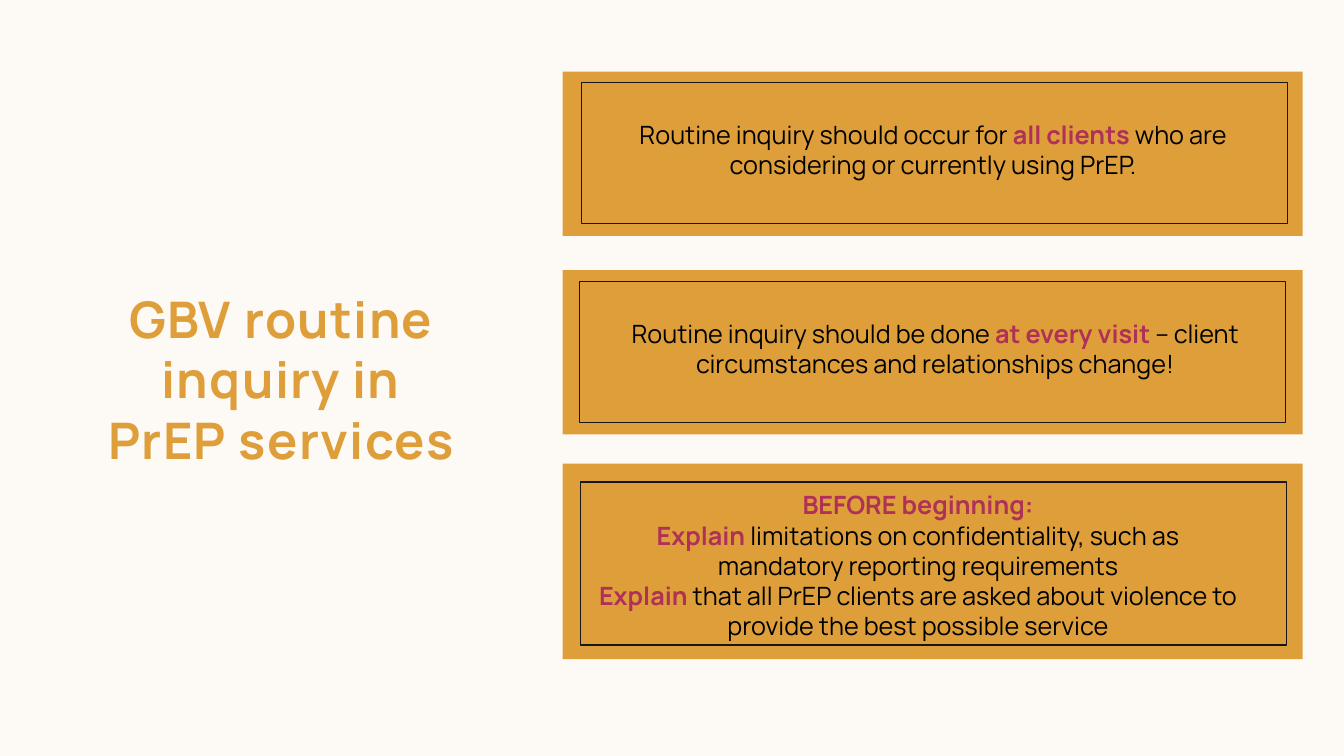
from pptx import Presentation
from pptx import util as u
from pptx.dml.color import RGBColor
from pptx.enum import shapes, text

COLORS = {
    "background": "FDFAF6",
    "gold": "DE9F3B",
    "berry": "AF3158",
    "black": "000000",
    "frame": "181717",
}
FONT = "Manrope"

# Each card: panel top and height, frame box, text box, paragraphs of (words, stressed).
CARDS = [
    (0.71, 1.63, (5.77, 0.82, 7, 1.4), (5.92, 1.13, 6.67, 0.71), [
        [("Routine inquiry should occur for ", False), ("all clients ", True),
         ("who are considering or currently using PrEP.", False)],
    ]),
    (2.68, 1.63, (5.75, 2.79, 7, 1.4), (5.94, 3.11, 6.67, 0.71), [
        [("Routine inquiry should be done ", False), ("at every visit ", True),
         ("– client circumstances and relationships change!", False)],
    ]),
    (4.6, 1.94, (5.76, 4.78, 7, 1.62), (5.77, 4.81, 6.67, 1.62), [
        [("BEFORE beginning:", True)],
        [("Explain", True),
         (" limitations on confidentiality, such as mandatory reporting requirements", False)],
        [("Explain", True),
         (" that all PrEP clients are asked about violence to provide the best possible service", False)],
    ]),
]


def color(name):
    return RGBColor.from_string(COLORS[name])


def inches(*lengths):
    return [u.Inches(length) for length in lengths]


def add_span(para, words, size=18, bold=False, ink="black", spacing=None):
    """Add formatted words to a paragraph; spacing is letter spacing in points."""
    span = para.add_run()
    span.text = words
    span.font.name = FONT
    span.font.size = u.Pt(size)
    span.font.bold = bold
    span.font.color.rgb = color(ink)
    if spacing:
        span.font._element.set("spc", str(spacing * 100))


class SlideBuilder:
    def __init__(self, deck):
        self.page = deck.slides.add_slide(deck.slide_layouts[5])
        fill = self.page.background.fill
        fill.solid()
        fill.fore_color.rgb = color("background")

    def title(self, words, place):
        title = self.page.shapes.title
        title.left, title.top, title.width, title.height = inches(*place)
        frame = title.text_frame
        frame.word_wrap = True
        frame.auto_size = text.MSO_AUTO_SIZE.NONE
        frame.vertical_anchor = text.MSO_ANCHOR.MIDDLE
        frame.margin_left = frame.margin_right = u.Inches(0.05)
        para = frame.paragraphs[0]
        para.alignment = text.PP_ALIGN.CENTER
        para.space_after = u.Pt(6)
        add_span(para, words, size=36, bold=True, ink="gold", spacing=1)

    def rectangle(self, place, fill=None, line=None):
        box = self.page.shapes.add_shape(shapes.MSO_SHAPE.RECTANGLE, *inches(*place))
        box.shadow.inherit = False
        if fill:
            box.fill.solid()
            box.fill.fore_color.rgb = color(fill)
        else:
            box.fill.background()
        if line:
            box.line.color.rgb = color(line)
            box.line.width = u.Pt(1)
        else:
            box.line.fill.background()

    def text_box(self, place, paragraphs):
        frame = self.page.shapes.add_textbox(*inches(*place)).text_frame
        frame.word_wrap = True
        frame.auto_size = text.MSO_AUTO_SIZE.SHAPE_TO_FIT_TEXT
        for index, spans in enumerate(paragraphs):
            para = frame.add_paragraph() if index else frame.paragraphs[0]
            para.alignment = text.PP_ALIGN.CENTER
            for words, stressed in spans:
                add_span(para, words, bold=stressed, ink="berry" if stressed else "black")


def main():
    deck = Presentation()
    deck.slide_width, deck.slide_height = inches(13.33, 7.5)
    slide = SlideBuilder(deck)
    slide.title("GBV routine inquiry in PrEP services", (0.97, 1.07, 3.64, 5.37))
    for top, height, frame, text_place, paragraphs in CARDS:
        slide.rectangle((5.58, top, 7.34, height), fill="gold")
        slide.rectangle(frame, line="frame")
        slide.text_box(text_place, paragraphs)
    deck.save("out.pptx")


if __name__ == "__main__":
    main()
